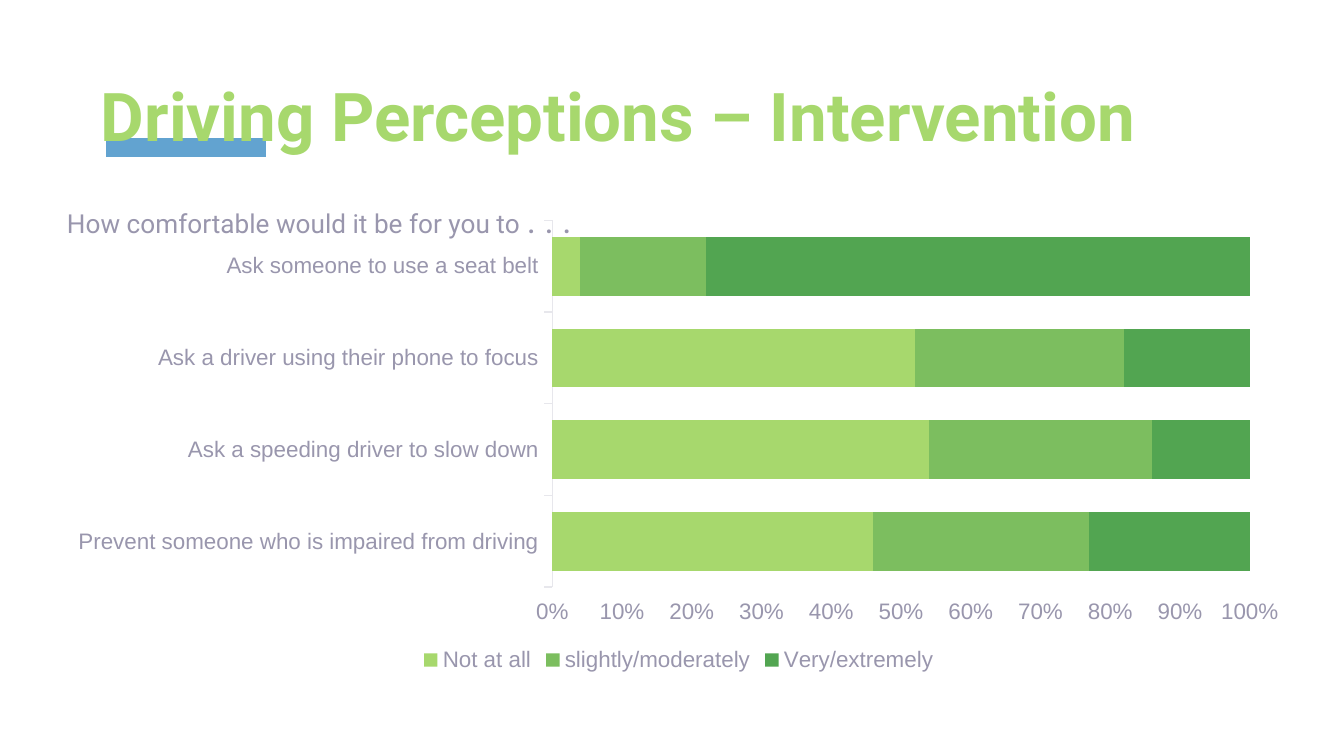
from lxml import etree
from pptx import Presentation, util as u
from pptx.chart.data import CategoryChartData
from pptx.dml.color import RGBColor
from pptx.enum import chart as ch, shapes, text
from pptx.oxml import parse_xml
from pptx.oxml.ns import nsdecls, qn

# Content
TITLE = "Driving Perceptions – Intervention"
PROMPT = [("How comfortable would it be for you to ", 14), (". . .", 18.6)]
CATEGORIES = [
    "Prevent someone who is impaired from driving",
    "Ask a speeding driver to slow down",
    "Ask a driver using their phone to focus",
    "Ask someone to use a seat belt",
]
SERIES = [
    ("Not at all", "A7D86D", (46, 54, 52, 4)),
    ("slightly/moderately", "7CBE5F", (31, 32, 30, 18)),
    ("Very/extremely", "52A551", (23, 14, 18, 78)),
]
GREEN, BLUE, GREY, PALE = "A7D86D", "62A3D0", "9996AD", "E7E7EC"

# Chart frame and its inner plot area, in inches
LEFT, TOP, WIDTH, HEIGHT = 0.4, 1.57, 9.3, 3.47
PLOT = {"x": (4.11 - LEFT) / WIDTH, "y": (1.64 - TOP) / HEIGHT,
        "w": 5.19 / WIDTH, "h": 2.73 / HEIGHT}


def rgb(value):
    return RGBColor.from_string(value)


def box(*lengths):
    return [u.Inches(n) for n in lengths]


def style(font, name, size, color, bold=False):
    font.name, font.size, font.bold = name, u.Pt(size), bold
    font.color.rgb = rgb(color)


def add_run(p, content, size, color, bold=False):
    r = p.add_run()
    r.text = content
    style(r.font, "Roboto", size, color, bold)


prs = Presentation()
prs.slide_width = u.Inches(10)
prs.slide_height = u.Inches(10 * 9 / 16)
s = prs.slides.add_slide(prs.slide_layouts[5])

# Accent bar, behind the title
bar = s.shapes.add_connector(shapes.MSO_CONNECTOR.STRAIGHT, *box(0.79, 1.1, 1.98, 1.1))
bar.line.color.rgb = rgb(BLUE)
bar.line.width = u.Pt(10)
etree.SubElement(bar._element.spPr, qn("a:effectLst"))

# Chart
data = CategoryChartData(number_format="0")
data.categories = CATEGORIES
for name, _, values in SERIES:
    data.add_series(name, values)
chart = s.shapes.add_chart(ch.XL_CHART_TYPE.BAR_STACKED_100,
                           *box(LEFT, TOP, WIDTH, HEIGHT), data).chart
style(chart.font, "Arial", 12, GREY)
chart.has_title = False
plot = chart.plots[0]
plot.gap_width, plot.overlap, plot.vary_by_categories = 56, 100, False
for series, (_, color, _) in zip(plot.series, SERIES):
    series.format.fill.solid()
    series.format.fill.fore_color.rgb = rgb(color)

# Axes and legend
for axis in (chart.category_axis, chart.value_axis):
    axis.has_major_gridlines = False
    axis.major_tick_mark = ch.XL_TICK_MARK.OUTSIDE
    axis.minor_tick_mark = ch.XL_TICK_MARK.NONE
    style(axis.tick_labels.font, "Arial", 12, GREY)
chart.category_axis.format.line.color.rgb = rgb(PALE)
chart.category_axis.format.line.width = u.Pt(0.75)
values_axis = chart.value_axis
values_axis.format.line.fill.background()
values_axis.minimum_scale = 0
values_axis.major_unit = 0.1
values_axis.tick_labels.number_format = "0%"
values_axis.tick_labels.number_format_is_linked = False
chart.has_legend = True
chart.legend.position = ch.XL_LEGEND_POSITION.BOTTOM
chart.legend.include_in_layout = False
style(chart.legend.font, "Arial", 12, GREY)

# Fixed inner plot area
plot_area = chart._chartSpace.chart.plotArea
for old in plot_area.findall(qn("c:layout")):
    plot_area.remove(old)
modes = "".join(f'<c:{k}Mode val="edge"/>' for k in "xy")
shares = "".join(f'<c:{k} val="{v:.4f}"/>' for k, v in PLOT.items())
plot_area.insert(0, parse_xml(
    f'<c:layout {nsdecls("c")}><c:manualLayout><c:layoutTarget val="inner"/>'
    f'{modes}{shares}</c:manualLayout></c:layout>'))

# Title, brought to the front of the bar
title = s.shapes.title
title.left, title.top, title.width, title.height = box(0.75, 0.21, 8.95, 0.94)
tf = title.text_frame
tf.margin_left = tf.margin_right = tf.margin_top = tf.margin_bottom = 0
tf.vertical_anchor = text.MSO_ANCHOR.BOTTOM
tf.auto_size = text.MSO_AUTO_SIZE.NONE
p = tf.paragraphs[0]
p.alignment = text.PP_ALIGN.LEFT
add_run(p, TITLE, 36, GREEN, bold=True)
s.shapes._spTree.append(title._element)

# Question above the chart
tf = s.shapes.add_textbox(*box(0.4, 1.43, 8.25, 0.41)).text_frame
tf.word_wrap = True
tf.auto_size = text.MSO_AUTO_SIZE.SHAPE_TO_FIT_TEXT
for content, size in PROMPT:
    add_run(tf.paragraphs[0], content, size, GREY)

prs.save("out.pptx")
